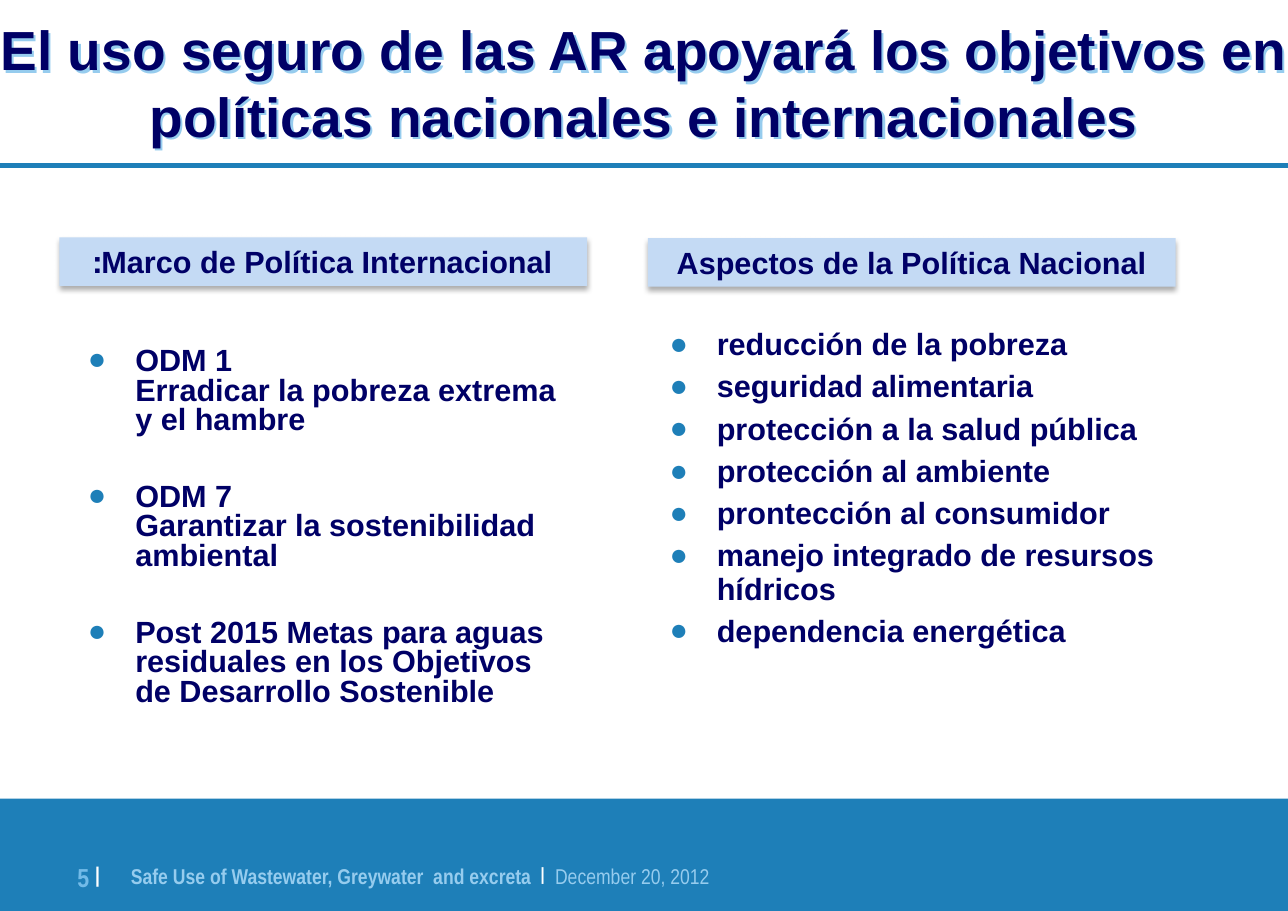
import dataclasses

import lxml.etree
import pptx
import pptx.dml.color
import pptx.enum.shapes
import pptx.enum.text
import pptx.oxml
import pptx.oxml.ns
import pptx.util

Cm = pptx.util.Cm
Pt = pptx.util.Pt
qn = pptx.oxml.ns.qn
ALIGN = pptx.enum.text.PP_ALIGN
ANCHOR = pptx.enum.text.MSO_ANCHOR


@dataclasses.dataclass(frozen=True)
class Theme:
    font: str = "Arial"
    narrow: str = "Arial Narrow"
    navy: str = "000066"
    blue: str = "1E7FB8"
    pale: str = "C4DAF4"
    sky: str = "96CCEE"
    number: str = "72BBE8"
    white: str = "FFFFFF"
    black: str = "000000"
    title_size: int = 36
    body_size: int = 20
    footer_size: int = 14
    number_size: int = 17
    number_bar_size: int = 24


T = Theme()
WIDTH, HEIGHT = Cm(29.7), Cm(21)
INDENT = Cm(1.09)

GOALS = [
    "ODM 1 \nErradicar la pobreza extrema y el hambre",
    "ODM 7\nGarantizar la sostenibilidad ambiental",
    "Post 2015 Metas para aguas residuales en los Objetivos de Desarrollo Sostenible",
]
NATIONAL = [
    "reducción de la pobreza",
    "seguridad alimentaria",
    "protección a la salud pública",
    "protección al ambiente",
    "prontección al consumidor",
    "manejo integrado de resursos hídricos",
    "dependencia energética",
]


def rgb(color):
    return pptx.dml.color.RGBColor.from_string(color)


def add_run(p, text, size=T.body_size, color=T.navy, font=T.font, bold=True, raised=0):
    r = p.add_run()
    r.text = text
    r.font.name = font
    r.font.size = Pt(size)
    r.font.bold = bold
    r.font.color.rgb = rgb(color)
    if raised:
        r.font._element.set("baseline", str(raised * 1000))


def set_frame(tf, anchor=ANCHOR.TOP):
    tf.word_wrap = True
    tf.auto_size = pptx.enum.text.MSO_AUTO_SIZE.NONE
    tf.vertical_anchor = anchor
    tf.margin_left = tf.margin_right = tf.margin_top = tf.margin_bottom = 0


def add_text_box(s, left, top, width, height):
    tf = s.shapes.add_textbox(left, top, width, height).text_frame
    set_frame(tf)
    return tf


def add_shadow(sp, color, opacity, blur, distance, angle):
    sp.shadow.inherit = False
    effects = sp._element.spPr.find(qn("a:effectLst"))
    shadow = lxml.etree.SubElement(
        effects, qn("a:outerShdw"), blurRad=str(Pt(blur)), dist=str(Pt(distance)),
        dir=str(angle * 60000), algn="t", rotWithShape="0")
    value = lxml.etree.SubElement(shadow, qn("a:srgbClr"), val=color)
    lxml.etree.SubElement(value, qn("a:alpha"), val=str(opacity * 1000))


def add_rect(s, left, top, width, height, color):
    sp = s.shapes.add_shape(
        pptx.enum.shapes.MSO_SHAPE.RECTANGLE, left, top, width, height)
    sp.shadow.inherit = False
    sp.fill.solid()
    sp.fill.fore_color.rgb = rgb(color)
    sp.line.fill.background()
    return sp


def add_title(s, text):
    sp = s.shapes.title
    sp.left, sp.top, sp.width, sp.height = 0, 0, WIDTH, Cm(3.78)
    add_shadow(sp, T.sky, 100, 0, 2, 45)
    set_frame(sp.text_frame, ANCHOR.MIDDLE)
    p = sp.text_frame.paragraphs[0]
    p.alignment = ALIGN.CENTER
    add_run(p, text, T.title_size)


def add_rule(s, top):
    line = s.shapes.add_connector(
        pptx.enum.shapes.MSO_CONNECTOR.STRAIGHT, 0, top, WIDTH, top)
    line.line.color.rgb = rgb(T.blue)
    line.line.width = Pt(3)
    lxml.etree.SubElement(line._element.spPr, qn("a:effectLst"))


def add_heading(s, left, top, text):
    sp = add_rect(s, left, top, Cm(12.17), Cm(1.12), T.pale)
    add_shadow(sp, T.black, 32, 3.5, 2.2, 90)
    tf = sp.text_frame
    set_frame(tf, ANCHOR.MIDDLE)
    p = tf.paragraphs[0]
    p.alignment = ALIGN.CENTER
    p._p.get_or_add_pPr().set("rtl", "1")
    add_run(p, text)


def add_bullets(s, left, top, width, height, items, line_spacing, gap):
    tf = add_text_box(s, left, top, width, height)
    for i, item in enumerate(items):
        p = tf.add_paragraph() if i else tf.paragraphs[0]
        p.line_spacing = line_spacing
        p.space_before = Pt(gap if i else 0)
        pPr = p._p.get_or_add_pPr()
        pPr.set("marL", str(INDENT))
        pPr.set("indent", str(-INDENT))
        color = lxml.etree.SubElement(pPr, qn("a:buClr"))
        lxml.etree.SubElement(color, qn("a:srgbClr"), val=T.blue)
        lxml.etree.SubElement(pPr, qn("a:buFont"), typeface=T.font)
        lxml.etree.SubElement(pPr, qn("a:buChar"), char="●")
        for j, line in enumerate(item.split("\n")):
            if j:
                p.add_line_break()
            add_run(p, line)


def add_footer(s):
    add_rect(s, 0, Cm(18.41), WIDTH, HEIGHT - Cm(18.41), T.blue)

    p = add_text_box(s, Cm(3.02), Cm(19.68), Cm(13.8), Cm(1.32)).paragraphs[0]
    tabs = lxml.etree.SubElement(p._p.get_or_add_pPr(), qn("a:tabLst"))
    for stop in (9.45, 9.78):
        lxml.etree.SubElement(tabs, qn("a:tab"), pos=str(Cm(stop)), algn="l")
    add_run(p, "Safe Use of Wastewater, Greywater  and excreta\t",
            T.footer_size, T.sky, T.narrow)
    add_run(p, "|", T.body_size, T.white, T.narrow, raised=12)
    add_run(p, "\tDecember 20, 2012", T.footer_size, T.sky, T.narrow, bold=False)

    p = add_text_box(s, Cm(1.17), Cm(19.61), Cm(1.14), Cm(1.02)).paragraphs[0]
    p.alignment = ALIGN.RIGHT
    add_run(p, "5 ", T.number_size, T.number, T.narrow)
    add_run(p, "|", T.number_bar_size, T.white, T.narrow, raised=14)


def main():
    prs = pptx.Presentation()
    prs.slide_width, prs.slide_height = WIDTH, HEIGHT
    s = prs.slides.add_slide(prs.slide_layouts.get_by_name("Title Only"))
    add_title(s, "El uso seguro de las AR apoyará los objetivos en "
                 "políticas nacionales e internacionales")
    add_rule(s, Cm(3.81))
    add_footer(s)
    add_heading(s, Cm(1.37), Cm(5.47), "Marco de Política Internacional:")
    add_heading(s, Cm(14.94), Cm(5.49), "Aspectos de la Política Nacional")
    add_bullets(s, Cm(2.03), Cm(8.03), Cm(10.82), Cm(9.57), GOALS, 0.8, 31)
    add_bullets(s, Cm(15.44), Cm(7.59), Cm(11.66), Cm(10.03), NATIONAL, 0.9, 6)
    prs.save("out.pptx")


if __name__ == "__main__":
    main()
